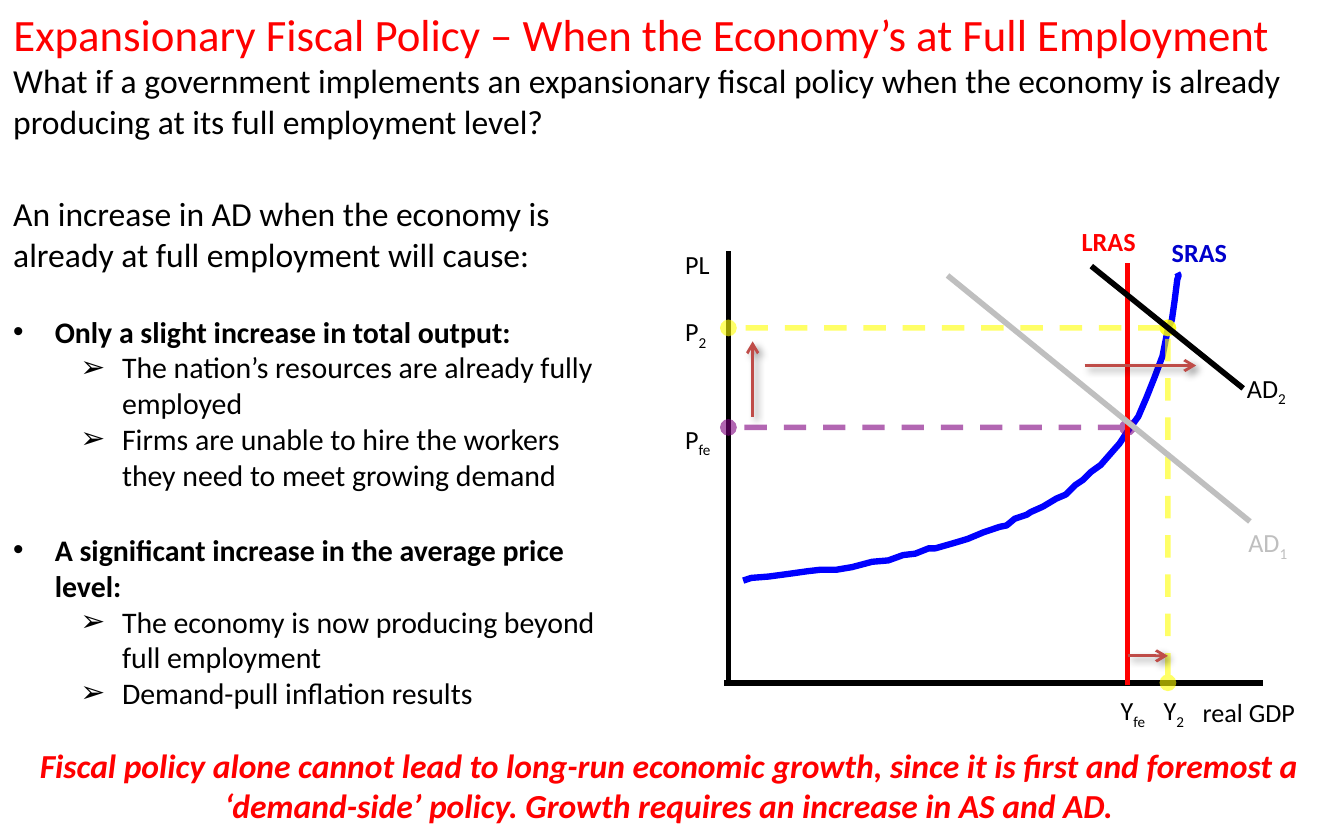
from pptx import Presentation
from pptx.dml.color import RGBColor
from pptx.enum.dml import MSO_LINE
from pptx.enum.shapes import MSO_CONNECTOR
from pptx.enum.text import MSO_ANCHOR, MSO_AUTO_SIZE, PP_ALIGN
from pptx.oxml.ns import qn
from pptx.util import Inches, Pt
from lxml.etree import SubElement

COLORS = {"red": "FF0000", "black": "000000", "navy": "0000CC", "blue": "0000FF",
          "purple": "800080", "yellow": "FFFF00", "gray": "BFBFBF", "brick": "BF4C48"}
WIDTH, HEIGHT = 10, 6.25

HEADING = "Expansionary Fiscal Policy – When the Economy’s at Full Employment"
QUESTION = ("What if a government implements an expansionary fiscal policy when the "
            "economy is already producing at its full employment level?")
INTRO = "An increase in AD when the economy is already at full employment will cause:"
EFFECTS = [
    ("Only a slight increase in total output:",
     ["The nation’s resources are already fully employed",
      "Firms are unable to hire the workers they need to meet growing demand"]),
    ("A significant increase in the average price level:",
     ["The economy is now producing beyond full employment",
      "Demand-pull inflation results"]),
]
CONCLUSION = ("Fiscal policy alone cannot lead to long-run economic growth, since it is first "
              "and foremost a ‘demand-side’ policy. Growth requires an increase in AS and AD.")

# Positions on the graph, in inches on the slide
AXIS_X, AXIS_Y = 5.42, 5.08
Y_FE, Y_2 = 8.39, 8.69
P_FE, P_2 = 3.18, 2.44

SRAS = [(5.53, 4.32), (5.59, 4.3), (5.72, 4.29), (5.87, 4.27), (6.01, 4.25), (6.1, 4.24),
        (6.22, 4.24), (6.34, 4.22), (6.49, 4.18), (6.61, 4.17), (6.72, 4.13), (6.81, 4.12),
        (6.91, 4.08), (6.96, 4.08), (7.1, 4.04), (7.2, 4.01), (7.32, 3.96), (7.44, 3.92),
        (7.49, 3.91), (7.55, 3.86), (7.64, 3.83), (7.67, 3.81), (7.76, 3.77), (7.86, 3.71),
        (7.93, 3.68), (8, 3.61), (8.06, 3.57), (8.12, 3.51), (8.19, 3.46), (8.26, 3.38),
        (8.33, 3.3), (8.39, 3.21), (8.47, 3.1), (8.53, 2.96), (8.59, 2.81), (8.65, 2.65),
        (8.69, 2.45), (8.72, 2.38), (8.74, 2.24), (8.76, 2.08), (8.77, 2.05), (8.76, 2.03)]

# start, end, colour, role
LINES = [
    ((AXIS_X, 1.87), (AXIS_X, AXIS_Y), "black", "solid"),
    ((AXIS_X - 0.03, AXIS_Y), (9.4, AXIS_Y), "black", "solid"),
    ((Y_FE, P_FE), (AXIS_X, P_FE), "purple", "guide"),
    ((Y_2, P_2), (AXIS_X, P_2), "yellow", "guide"),
    ((Y_2, AXIS_Y), (Y_2, P_2), "yellow", "guide"),
    ((Y_FE, AXIS_Y + 0.02), (Y_FE, 1.96), "red", "solid"),
    ((7.05, 2.05), (9.3, 3.88), "gray", "solid"),
    ((8.12, 1.98), (9.25, 2.89), "black", "solid"),
    ((8.07, 2.72), (8.9, 2.72), "brick", "shift"),
    ((Y_FE, 4.88), (Y_2, 4.88), "brick", "shift"),
    ((5.6, 3.1), (5.6, 2.54), "brick", "shift"),
]

# text, subscript, left, top, colour, bold
LABELS = [
    ("PL", "", 5, 1.8, "black", False), ("P", "2", 5, 2.3, "black", False),
    ("P", "fe", 5, 3.1, "black", False), ("Y", "fe", 8.24, 5.12, "black", False),
    ("Y", "2", 8.56, 5.12, "black", False), ("real GDP", "", 8.85, 5.13, "black", False),
    ("LRAS", "", 7.95, 1.63, "red", True), ("SRAS", "", 8.62, 1.71, "navy", True),
    ("AD", "1", 9.19, 3.87, "gray", False), ("AD", "2", 9.18, 2.72, "black", False),
]


def rgb(name):
    return RGBColor.from_string(COLORS[name])


def text_box(left, top, width, height):
    frame = slide.shapes.add_textbox(*map(Inches, (left, top, width, height))).text_frame
    frame.word_wrap = True
    return frame


def write(frame, text, size=18, color="black", bold=False, italic=False, align=PP_ALIGN.LEFT,
          subscript="", bullet="", indent=0, before=0):
    """Fill the frame's empty first paragraph, or add another one."""
    first = frame.paragraphs[0]
    paragraph = frame.add_paragraph() if first.runs else first
    paragraph.alignment = align
    paragraph.space_before = Pt(before)
    for part, baseline in ((text, 0), (subscript, -25000)):
        if not part:
            continue
        run = paragraph.add_run()
        run.text = part
        font = run.font
        font.name, font.size, font.bold, font.italic = "Calibri", Pt(size), bold, italic
        font.color.rgb = rgb(color)
        if baseline:
            font._element.set("baseline", str(baseline))
    if bullet:
        properties = paragraph._p.get_or_add_pPr()
        properties.set("marL", str(Inches(indent)))
        properties.set("indent", str(-Inches(0.31)))
        SubElement(properties, qn("a:buFont"), typeface="Arial")
        SubElement(properties, qn("a:buChar"), char=bullet)


def set_alpha(color_element, percent):
    SubElement(color_element, qn("a:alpha"), val=str(percent * 1000))


def draw_line(start, end, color, role):
    """Draw a solid line, a translucent dashed guide or a shadowed shift arrow."""
    connector = slide.shapes.add_connector(MSO_CONNECTOR.STRAIGHT,
                                           *map(Inches, (*start, *end)))
    line = connector.line
    line.color.rgb = rgb(color)
    line.width = Pt(1.5 if role == "shift" else 3)
    properties = connector._element.spPr
    outline = line._get_or_add_ln()
    effects = SubElement(properties, qn("a:effectLst"))
    if role == "guide":
        line.dash_style = MSO_LINE.DASH
        set_alpha(outline.find(".//" + qn("a:srgbClr")), 60)
        for tip in ("a:headEnd", "a:tailEnd"):
            SubElement(outline, qn(tip), type="oval")
    elif role == "shift":
        SubElement(outline, qn("a:tailEnd"), type="arrow")
        shadow = SubElement(effects, qn("a:outerShdw"), blurRad=str(Pt(4)), dist=str(Pt(3)),
                            dir=str(45 * 60000), algn="tl", rotWithShape="0")
        set_alpha(SubElement(shadow, qn("a:srgbClr"), val=COLORS["black"]), 40)


def draw_curve(points, color, width):
    # The builder rounds to whole units, so the points go in as EMU
    start, *rest = [(Inches(x), Inches(y)) for x, y in points]
    builder = slide.shapes.build_freeform(*start)
    builder.add_line_segments(rest, close=False)
    curve = builder.convert_to_shape()
    curve.shadow.inherit = False
    curve.fill.background()
    curve.line.color.rgb = rgb(color)
    curve.line.width = Pt(width)


deck = Presentation()
deck.slide_width, deck.slide_height = Inches(WIDTH), Inches(HEIGHT)
slide = deck.slides.add_slide(deck.slide_layouts[5])

title = slide.shapes.title
title.left, title.top, title.width, title.height = map(Inches, (0, 0, WIDTH, 0.5))
title.text_frame.auto_size = MSO_AUTO_SIZE.NONE
title.text_frame.vertical_anchor = MSO_ANCHOR.TOP
write(title.text_frame, HEADING, size=24, color="red")
write(text_box(0, 0.4, WIDTH, 0.7), QUESTION)

draw_curve(SRAS, "blue", 3.4)
for graph_line in LINES:
    draw_line(*graph_line)
for label, subscript, left, top, color, bold in LABELS:
    write(text_box(left, top, 1.23 if label == "real GDP" else 0.8, 0.34), label,
          size=14, color=color, bold=bold, subscript=subscript)

effects_frame = text_box(0, 1.39, 4.61, 3.97)
write(effects_frame, INTRO)
for effect, reasons in EFFECTS:
    write(effects_frame, effect, size=16, bold=True, bullet="•", indent=0.31, before=21)
    for reason in reasons:
        write(effects_frame, reason, size=16, bullet="➢", indent=0.81)

write(text_box(-0.02, 5.49, WIDTH, 0.71), CONCLUSION, color="red", bold=True, italic=True,
      align=PP_ALIGN.CENTER)
deck.save("out.pptx")
